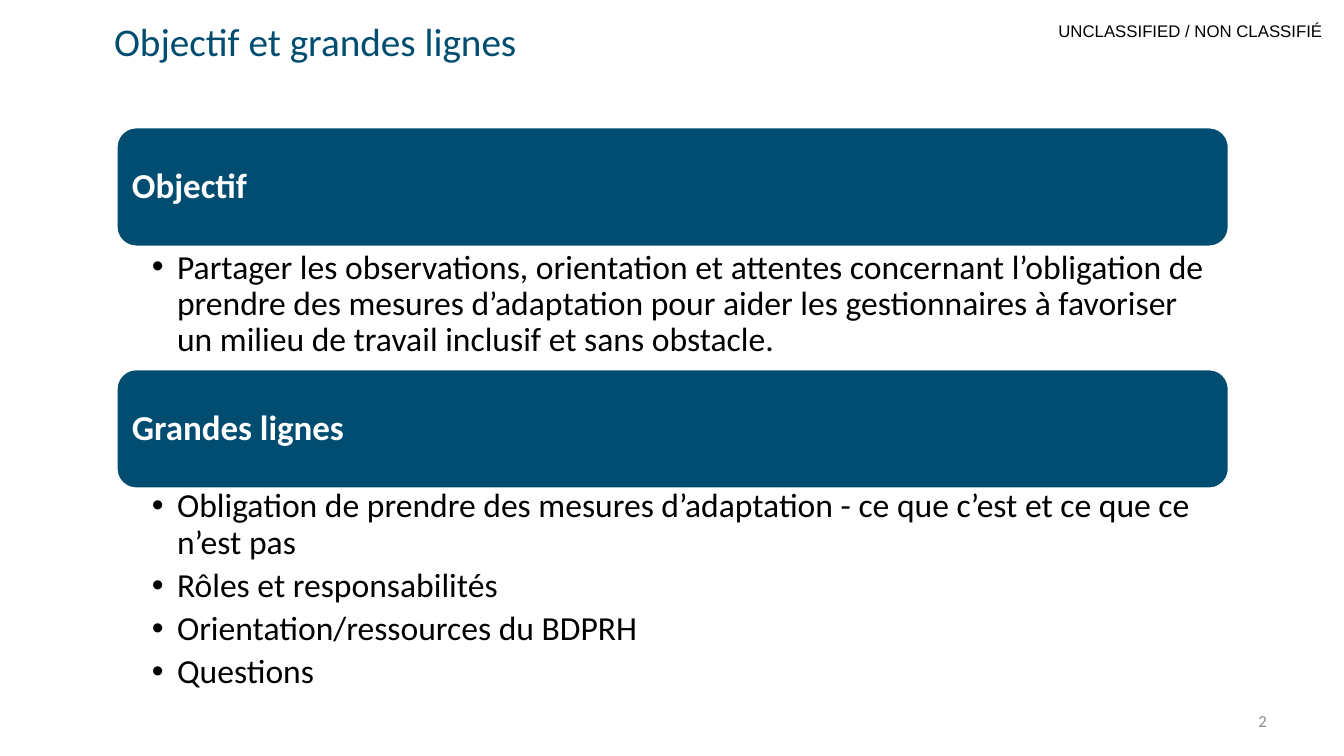
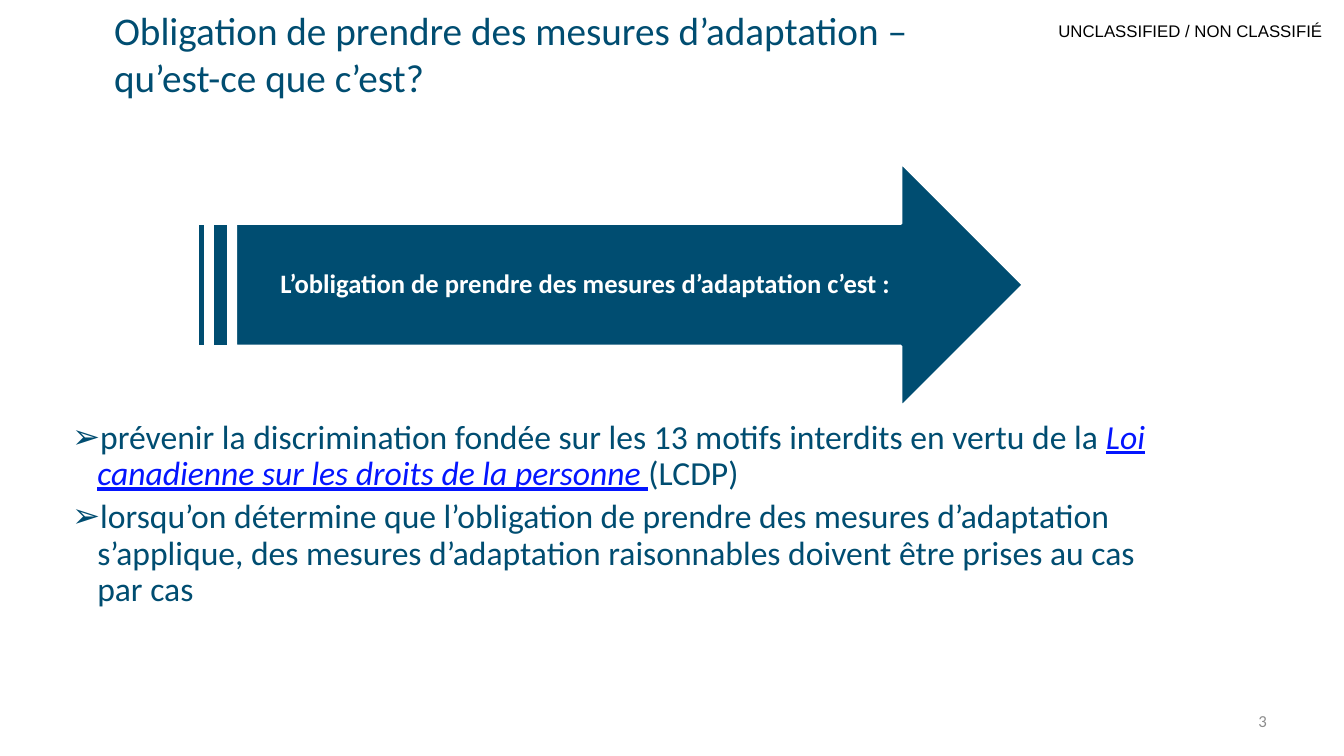
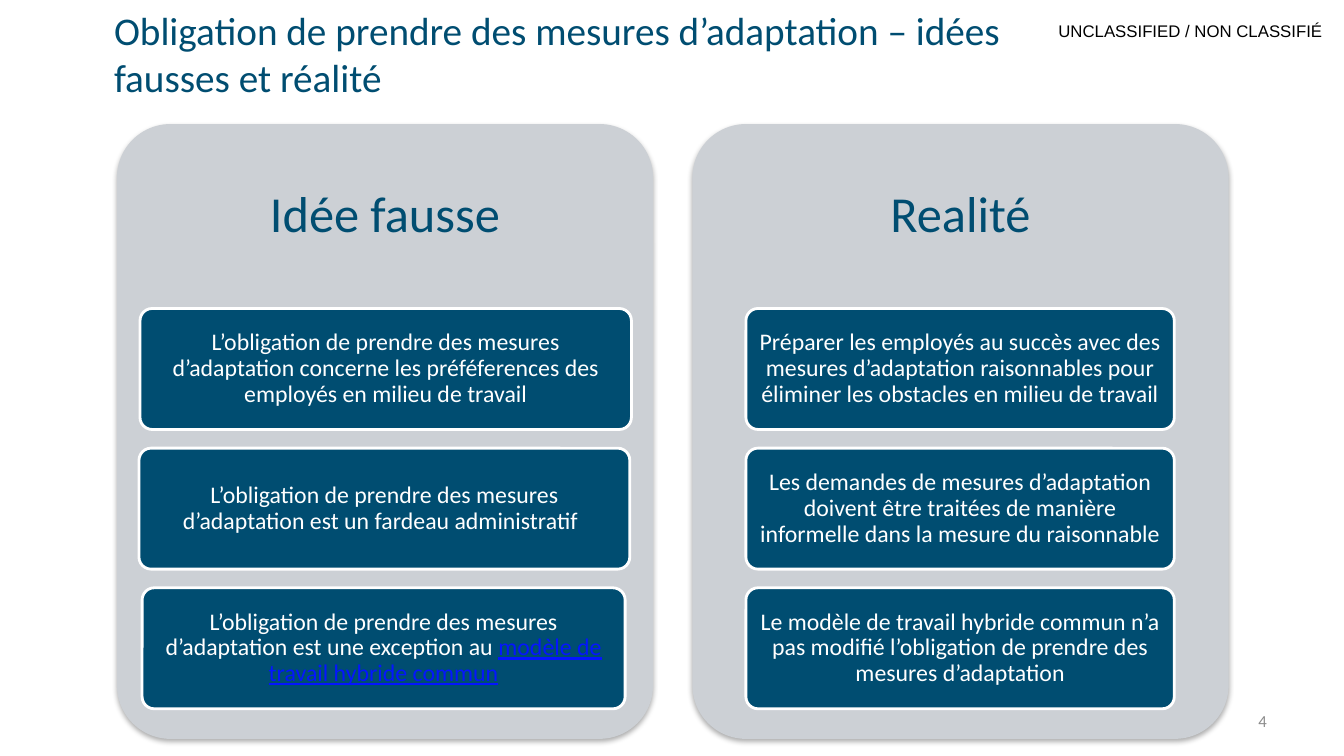
from dataclasses import dataclass

from lxml.etree import SubElement
from pptx import Presentation
from pptx.dml.color import RGBColor
from pptx.enum.shapes import MSO_SHAPE
from pptx.enum.text import MSO_ANCHOR, PP_ALIGN
from pptx.oxml.ns import qn
from pptx.util import Pt


@dataclass(frozen=True)
class Theme:
    teal: str = "004D71"
    white: str = "FFFFFF"
    black: str = "000000"
    panel: str = "CCD0D5"
    link: str = "0415FF"
    grey: str = "8C8C8C"
    font: str = "Calibri"
    label: str = "Arial"
    title: int = 28
    head: int = 36
    bar: int = 25
    body: int = 24
    arrow: int = 19
    card: int = 17
    small: int = 12


T = Theme()


def write(frame, text, size=T.body, color=T.teal, font=T.font, bold=False,
          align=PP_ALIGN.LEFT, anchor=MSO_ANCHOR.TOP, inset=(0, 0, 0, 0),
          line=None, after=0, bullet=None, wrap=True):
    frame.word_wrap = wrap
    frame.vertical_anchor = anchor
    (frame.margin_left, frame.margin_top,
     frame.margin_right, frame.margin_bottom) = map(Pt, inset)
    for i, item in enumerate([text] if isinstance(text, str) else text):
        para = frame.add_paragraph() if i else frame.paragraphs[0]
        if bullet:
            props = para._p.get_or_add_pPr()
            props.set("marL", str(Pt(18)))
            props.set("indent", str(Pt(-18)))
            SubElement(props, qn("a:buFont"), typeface=T.label)
            SubElement(props, qn("a:buChar"), char=bullet)
        para.alignment = align
        para.space_after = Pt(after)
        if line:
            para.line_spacing = line
        for part in [(item, {})] if isinstance(item, str) else item:
            words, style = part
            run = para.add_run()
            run.text = words
            run.font.name = font
            run.font.size = Pt(size)
            run.font.bold = bold
            run.font.italic = style.get("italic", False)
            run.font.underline = style.get("under", False)
            run.font.color.rgb = RGBColor.from_string(style.get("color", color))


def place(slide, box, text, **style):
    area = slide.shapes.add_textbox(*map(Pt, box))
    write(area.text_frame, text, **style)


def draw(slide, kind, box, fill=T.teal, edge=T.white, round=None):
    shape = slide.shapes.add_shape(kind, *map(Pt, box))
    shape.shadow.inherit = False
    shape.fill.solid()
    shape.fill.fore_color.rgb = RGBColor.from_string(fill)
    if edge:
        shape.line.color.rgb = RGBColor.from_string(edge)
        shape.line.width = Pt(2)
    else:
        shape.line.fill.background()
    if round is not None:
        shape.adjustments[0] = round
    return shape


def shade(shape):
    effects = shape._element.spPr.find(qn("a:effectLst"))
    outer = SubElement(effects, qn("a:outerShdw"), blurRad=str(Pt(3.5)),
                       dist=str(Pt(2.2)), dir="5400000", rotWithShape="0")
    tint = SubElement(outer, qn("a:srgbClr"), val=T.black)
    SubElement(tint, qn("a:alpha"), val="32000")


def start(deck, number, title, top=4.3, width=570):
    slide = deck.slides.add_slide(deck.slide_layouts[6])
    place(slide, (756, 15, 192, 14.5), "UNCLASSIFIED / NON CLASSIFIÉ",
          size=T.small, color=T.black, font=T.label, wrap=False)
    place(slide, (688, 500.5, 224, 29), str(number), size=T.small,
          color=T.grey, align=PP_ALIGN.RIGHT, anchor=MSO_ANCHOR.MIDDLE,
          inset=(7.2, 3.6, 7.2, 3.6))
    place(slide, (81.5, top, width, 77), title, size=T.title)
    return slide


def listing(slide, box, items, **style):
    place(slide, box, items, inset=(25.5, 2.2, 13.7, 2.2), line=0.9,
          after=5, **style)


def section(slide, box, head, items, gap=0):
    left, top, width, height = box
    bar = draw(slide, MSO_SHAPE.ROUNDED_RECTANGLE, (left, top, width, 85.7))
    write(bar.text_frame, head, size=T.bar, color=T.white, bold=True,
          anchor=MSO_ANCHOR.MIDDLE, inset=(7.2,) * 4, line=0.9)
    listing(slide, (left, top + 85.7 + gap, width, height - 85.7 - gap),
            items, color=T.black, bullet="•")


def banner(slide, box, text):
    arrow = draw(slide, MSO_SHAPE.STRIPED_RIGHT_ARROW, box)
    write(arrow.text_frame, text, size=T.arrow, color=T.white, bold=True,
          anchor=MSO_ANCHOR.MIDDLE, inset=(32, 5.8, 0, 5.8), line=0.9)


def column(slide, box, head, cards):
    left, top, width, height = box
    shade(draw(slide, MSO_SHAPE.ROUNDED_RECTANGLE, box, fill=T.panel,
               edge=None, round=0.1))
    place(slide, (left, top, width, 131.8), head, size=T.head,
          align=PP_ALIGN.CENTER, anchor=MSO_ANCHOR.MIDDLE,
          inset=(10.8,) * 4, line=0.9)
    for i, (shift, wide, text) in enumerate(cards):
        card = draw(slide, MSO_SHAPE.ROUNDED_RECTANGLE,
                    (left + shift, top + 131.8 + i * 99.75, wide, 86.4),
                    round=0.1)
        write(card.text_frame, text, size=T.card, color=T.white,
              align=PP_ALIGN.CENTER, anchor=MSO_ANCHOR.MIDDLE,
              inset=(3.6, 2.9, 3.6, 2.9), line=0.9)


def outline(deck):
    slide = start(deck, 2, "Objectif et grandes lignes", top=12.2)
    section(slide, (83, 90.7, 795, 170.7), "Objectif", [
        "Partager les observations, orientation et attentes concernant "
        "l’obligation de prendre des mesures d’adaptation pour aider les "
        "gestionnaires à favoriser un milieu de travail inclusif et sans "
        "obstacle."])
    section(slide, (83, 263.5, 795, 239.8), "Grandes lignes", [
        "Obligation de prendre des mesures d’adaptation - ce que c’est et "
        "ce que ce n’est pas",
        "Rôles et responsabilités",
        "Orientation/ressources du BDPRH",
        "Questions"], gap=-2.2)


def duty(deck):
    slide = start(deck, 3, "Obligation de prendre des mesures d’adaptation – "
                  "qu’est-ce que c’est?")
    banner(slide, (141, 116, 590, 175),
           "L’obligation de prendre des mesures d’adaptation c’est :")
    law = {"color": T.link, "italic": True, "under": True}
    listing(slide, (26, 298, 822, 162), [
        [("prévenir la discrimination fondée sur les 13 motifs interdits en "
          "vertu de la ", {}),
         ("Loi canadienne sur les droits de la personne ", law),
         ("(LCDP)", {})],
        "lorsqu’on détermine que l’obligation de prendre des mesures "
        "d’adaptation s’applique, des mesures d’adaptation raisonnables "
        "doivent être prises au cas par cas"], bullet="➢")


def myths(deck):
    slide = start(deck, 4, "Obligation de prendre des mesures d’adaptation – "
                  "idées fausses et réalité", width=668)
    lead = "L’obligation de prendre des mesures d’adaptation "
    link = {"color": T.link, "under": True}
    false = [
        (16.5, 351, lead + "concerne les préféferences des employés en "
         "milieu de travail"),
        (15.8, 350.6, lead + "est un fardeau administratif\t"),
        (18, 345, [[(lead + "est une exception au ", {}),
                    ("modèle de travail hybride commun", link)]])]
    true = [(38.2, 306, text) for text in (
        "Préparer les employés au succès avec des mesures d’adaptation "
        "raisonnables pour éliminer les obstacles en milieu de travail",
        "Les demandes de mesures d’adaptation doivent être traitées de "
        "manière informelle dans la mesure du raisonnable",
        "Le modèle de travail hybride commun n’a pas modifié l’obligation "
        "de prendre des mesures d’adaptation")]
    for i, (head, cards) in enumerate((("Idée fausse", false),
                                       ("Realité", true))):
        column(slide, (83.5 + i * 411.1, 88.6, 383, 439.2), head, cards)


def main():
    deck = Presentation()
    deck.slide_width, deck.slide_height = Pt(960), Pt(540)
    for build in (outline, duty, myths):
        build(deck)
    deck.save("out.pptx")


if __name__ == "__main__":
    main()
